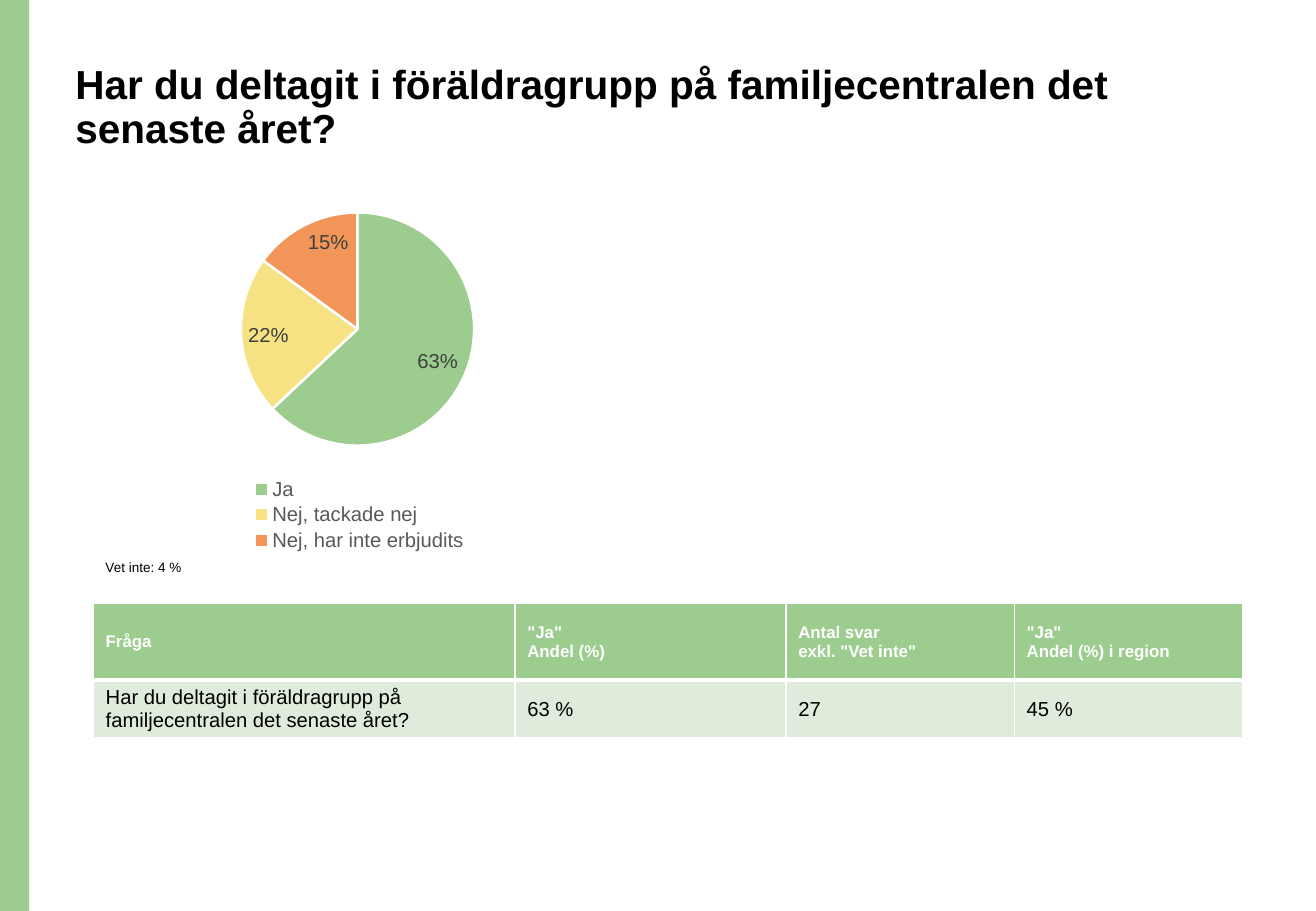
from dataclasses import dataclass

from lxml.etree import SubElement
from pptx import Presentation
from pptx.chart.data import CategoryChartData
from pptx.dml.color import RGBColor as RGB
from pptx.enum.chart import XL_CHART_TYPE as Kind
from pptx.enum.chart import XL_LABEL_POSITION as Spot
from pptx.enum.chart import XL_LEGEND_POSITION as Side
from pptx.enum.shapes import MSO_SHAPE as Shape
from pptx.enum.text import MSO_ANCHOR as Anchor
from pptx.enum.text import MSO_AUTO_SIZE as Fit
from pptx.enum.text import PP_ALIGN as Align
from pptx.oxml import parse_xml
from pptx.oxml.ns import nsdecls, qn
from pptx.util import Inches, Pt


@dataclass(frozen=True)
class Theme:
    font: str = "Arial"
    green: str = "9DCC8F"
    yellow: str = "F6E183"
    orange: str = "F29559"
    pale: str = "DFECDB"
    white: str = "FFFFFF"
    black: str = "000000"
    label: str = "404040"
    legend: str = "595959"
    title: int = 24
    body: int = 12
    head: int = 10
    note: int = 8


T = Theme()
WIDE, HIGH = Inches(10.83), Inches(7.5)
ASK = "Har du deltagit i föräldragrupp på familjecentralen det senaste året?"
HEADS = ["Fråga", '"Ja"\nAndel (%)', 'Antal svar\nexkl. "Vet inte"',
         '"Ja"\nAndel (%) i region']
ROW = [ASK, "63 %", "27", "45 %"]
SLICES = [("Ja", 0.63, T.green), ("Nej, tackade nej", 0.22, T.yellow),
          ("Nej, har inte erbjudits", 0.15, T.orange)]


def across(share):
    return round(WIDE * share / 100)


def down(share):
    return round(HIGH * share / 100)


def area(x, y, w, h):
    """Turn percentages of the slide into left, top, width and height."""
    return across(x), down(y), across(w), down(h)


def style(font, size, color, bold=False):
    font.name, font.size, font.bold = T.font, Pt(size), bold
    font.color.rgb = RGB.from_string(color)


def paint(fill, color):
    fill.solid()
    fill.fore_color.rgb = RGB.from_string(color)


def add_band(slide):
    band = slide.shapes.add_shape(Shape.RECTANGLE, *area(0, 0, 2.22, 100))
    band.shadow.inherit = False
    paint(band.fill, T.green)
    band.line.fill.background()


def set_title(slide):
    title = slide.shapes.title
    title.left, title.top, title.width, title.height = area(4.8, 6.4, 86.24, 13.6)
    frame = title.text_frame
    frame.text = ASK
    frame.auto_size, frame.vertical_anchor = Fit.NONE, Anchor.TOP
    para = frame.paragraphs[0]
    para.alignment, para.line_spacing = Align.LEFT, 0.9
    style(para.font, T.title, T.black, True)


def add_note(slide):
    frame = slide.shapes.add_textbox(*area(7.11, 59.87, 19.39, 6.4)).text_frame
    frame.word_wrap = True
    frame.text = "Vet inte: 4 %"
    para = frame.paragraphs[0]
    para.line_spacing = 1.5
    style(para.font, T.note, T.black)


def layout(x, y, w, h, inner=False):
    """Make a fixed chart layout from shares of the chart's size."""
    node = parse_xml(f"<c:layout {nsdecls('c')}><c:manualLayout/></c:layout>")
    parts = [("layoutTarget", "inner")] if inner else []
    parts += [("xMode", "edge"), ("yMode", "edge"),
              ("x", x), ("y", y), ("w", w), ("h", h)]
    for name, val in parts:
        SubElement(node[0], qn(f"c:{name}")).set("val", str(val))
    return node


def add_pie(slide):
    data = CategoryChartData()
    data.categories = [name for name, _, _ in SLICES]
    data.add_series("Series 1", [val for _, val, _ in SLICES])
    chart = slide.shapes.add_chart(
        Kind.PIE, *area(11.27, 21.33, 31.49, 40), data).chart
    chart.has_title = False
    style(chart.font, T.head, T.black)

    chart.has_legend = True
    legend = chart.legend
    legend.position, legend.include_in_layout = Side.BOTTOM, False
    style(legend.font, T.body, T.legend)
    legend._element.find(qn("c:overlay")).addprevious(
        layout(0.24, 0.77, 0.54, 0.22))

    zone = chart._chartSpace.chart.plotArea
    for old in zone.findall(qn("c:layout")):
        zone.remove(old)
    zone.insert(0, layout(0.22, 0.05, 0.57, 0.64, inner=True))

    plot = chart.plots[0]
    plot.vary_by_categories = True
    for i, (_, _, color) in enumerate(SLICES):
        form = plot.series[0].points[i].format
        paint(form.fill, color)
        paint(form.line.fill, T.white)
        form.line.width = Pt(1.5)
    plot.has_data_labels = True
    labels = plot.data_labels
    labels.show_value, labels.position = True, Spot.INSIDE_END
    labels.number_format, labels.number_format_is_linked = "0%", False
    style(labels.font, T.body, T.label)


def edge(cell, **widths):
    """Give a cell white borders; call it before the cell is filled."""
    props = cell._tc.get_or_add_tcPr()
    for side, width in widths.items():
        line = SubElement(props, qn(f"a:ln{side}"), w=str(Pt(width)))
        fill = SubElement(line, qn("a:solidFill"))
        SubElement(fill, qn("a:srgbClr"), val=T.white)


def fill_row(cells, texts, back, size, color, bold, top, base):
    for cell, text in zip(cells, texts):
        edge(cell, L=1, R=1, T=top, B=base)
        paint(cell.fill, back)
        cell.text = text
        cell.vertical_anchor = Anchor.MIDDLE
        for para in cell.text_frame.paragraphs:
            style(para.font, size, color, bold)


def add_grid(slide):
    table = slide.shapes.add_table(
        2, len(HEADS), *area(7.11, 66.27, 87.35, 14.53)).table
    for col, share in zip(table.columns, (32.04, 20.59, 17.36, 17.36)):
        col.width = across(share)
    for row, share in zip(table.rows, (8.4, 6.13)):
        row.height = down(share)
    head, body = table.rows
    fill_row(head.cells, HEADS, T.green, T.head, T.white, True, 1, 3)
    fill_row(body.cells, ROW, T.pale, T.body, T.black, False, 3, 1)


def main():
    deck = Presentation()
    deck.slide_width, deck.slide_height = WIDE, HIGH
    slide = deck.slides.add_slide(deck.slide_layouts[5])
    add_band(slide)
    set_title(slide)
    add_pie(slide)
    add_grid(slide)
    add_note(slide)
    deck.save("out.pptx")


if __name__ == "__main__":
    main()
